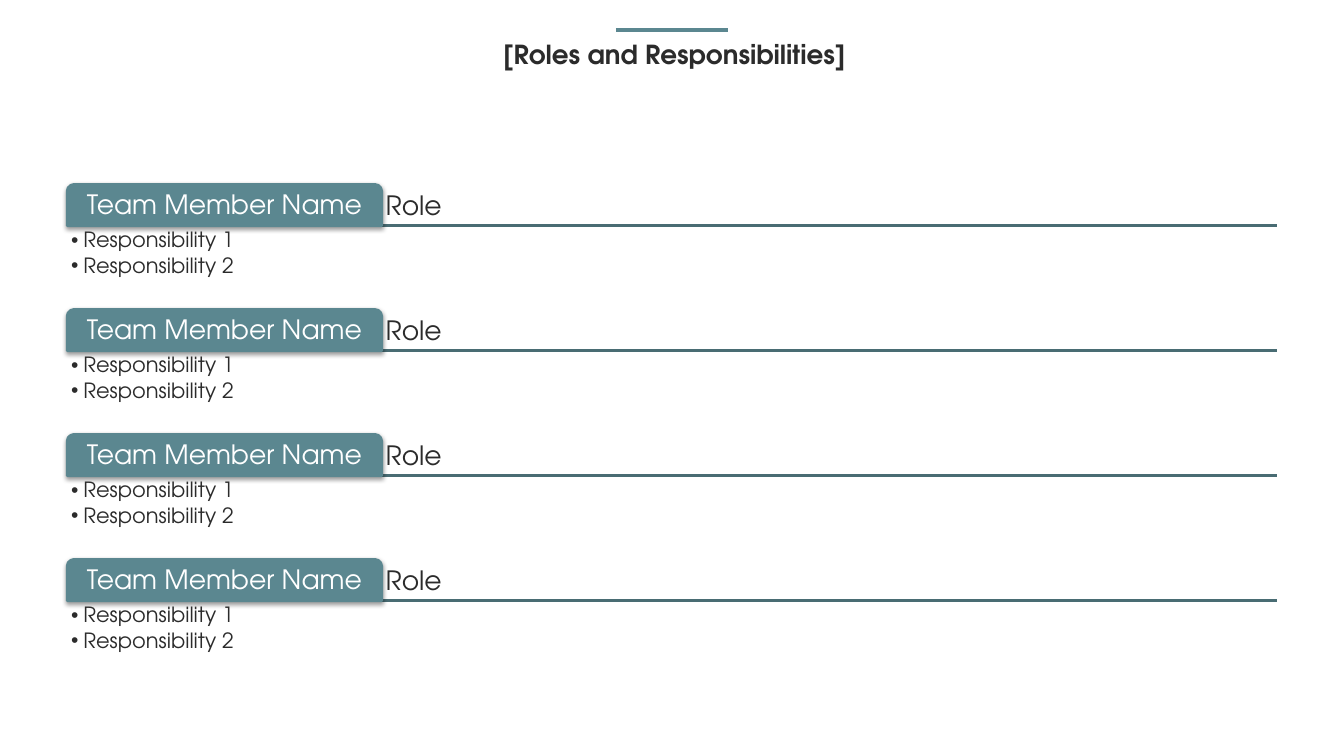
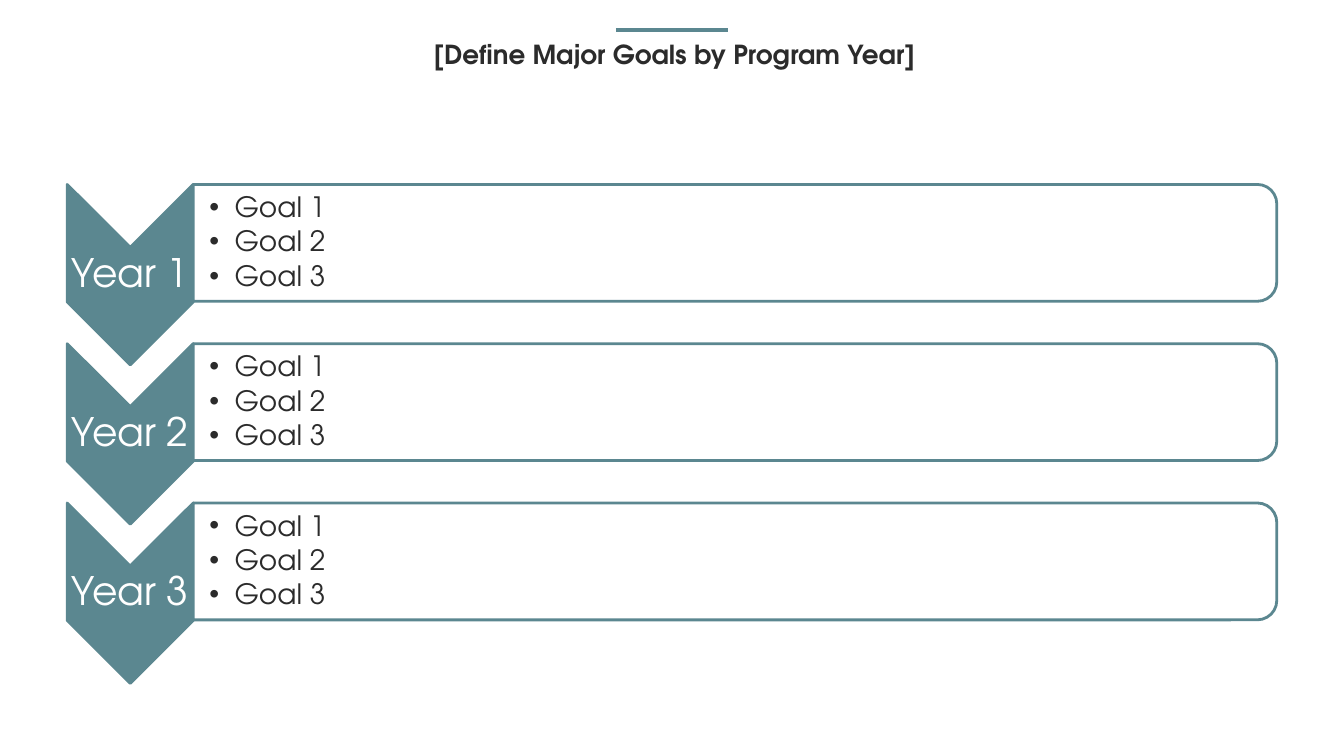
from dataclasses import dataclass

from lxml import etree
from pptx import Presentation
from pptx.dml.color import RGBColor
from pptx.enum.shapes import MSO_CONNECTOR, MSO_SHAPE
from pptx.enum.text import MSO_ANCHOR, PP_ALIGN
from pptx.oxml.ns import qn
from pptx.util import Emu, Inches, Pt

LINE = MSO_CONNECTOR.STRAIGHT
TAB = MSO_SHAPE.ROUND_2_SAME_RECTANGLE
CHEVRON = MSO_SHAPE.CHEVRON
TOP, MIDDLE, BOTTOM = MSO_ANCHOR.TOP, MSO_ANCHOR.MIDDLE, MSO_ANCHOR.BOTTOM
LEFT, CENTER = PP_ALIGN.LEFT, PP_ALIGN.CENTER


@dataclass(frozen=True)
class Theme:
    font: str = "TeX Gyre Adventor"
    teal: str = "5B8790"
    deep: str = "496C73"
    ink: str = "2B2B2B"
    white: str = "FFFFFF"
    title: float = 18.7
    name: float = 19
    duty: float = 15
    year: float = 28
    goal: float = 20
    rule: float = 2
    accent: float = 3


THEME = Theme()

# Slide and content grid, in inches
WIDE, HIGH = 13.33, 7.5
EDGE = WIDE * 0.05
SPAN = WIDE * 0.9
START = 1.83

# Team rows
TEAM_STEP = 1.24
TAB_WIDE, TAB_HIGH = SPAN * 0.26, 0.41
DUTY_HIGH = TEAM_STEP - TAB_HIGH

# Year rows
YEAR_STEP = 1.58
MARK_WIDE, MARK_HIGH = 1.25, 1.79
BAR_HIGH = 1.16

TEAM = [("Team Member Name", "Role", ["Responsibility 1", "Responsibility 2"])] * 4
YEARS = [(f"Year {n}", ["Goal 1", "Goal 2", "Goal 3"]) for n in (1, 2, 3)]


def color(code):
    return RGBColor.from_string(code)


def write(shape, lines, size, tint=THEME.ink, align=LEFT, anchor=MIDDLE,
          pad=(0.04, 0.04), bold=False, hang=0, lead=0.9):
    """Fill a shape with text; pad is (left, other sides), hang makes bullets."""
    frame = shape.text_frame
    frame.word_wrap = True
    frame.vertical_anchor = anchor
    frame.margin_left = Inches(pad[0])
    frame.margin_top = frame.margin_right = frame.margin_bottom = Inches(pad[1])
    frame.text = "\n".join(lines)
    for para in frame.paragraphs:
        if hang:
            bullet(para, hang)
            para.space_after = Pt(size * 0.15)
        para.alignment = align
        para.line_spacing = lead
        font = para.font
        font.name, font.size, font.bold = THEME.font, Pt(size), bold
        font.color.rgb = color(tint)


def bullet(para, hang):
    props = para._p.get_or_add_pPr()
    props.set("marL", str(Inches(hang)))
    props.set("indent", str(-Inches(hang)))
    etree.SubElement(props, qn("a:buFont")).set("typeface", "Arial")
    etree.SubElement(props, qn("a:buChar")).set("char", "•")


def text(slide, box, lines, size, **style):
    area = slide.shapes.add_textbox(*map(Inches, box))
    write(area, lines, size, **style)


def rule(slide, left, right, top, tint, weight):
    line = slide.shapes.add_connector(LINE, *map(Inches, (left, top, right, top)))
    line.line.color.rgb = color(tint)
    line.line.width = Pt(weight)
    etree.SubElement(line._element.spPr, qn("a:effectLst"))


def block(slide, kind, box, fill, turned=False):
    """Draw a teal-edged shape; a turned one is rotated to cover box."""
    left, top, wide, high = box
    if turned:
        left, top = left + (wide - high) / 2, top + (high - wide) / 2
        wide, high = high, wide
    shape = slide.shapes.add_shape(kind, *map(Inches, (left, top, wide, high)))
    shape.rotation = 90 if turned else 0
    shape.shadow.inherit = False
    shape.fill.solid()
    shape.fill.fore_color.rgb = color(fill)
    shape.line.color.rgb = color(THEME.teal)
    shape.line.width = Pt(THEME.rule)
    return shape


def shade(shape):
    """Add a soft shadow straight below."""
    effects = shape._element.spPr.find(qn("a:effectLst"))
    drop = etree.SubElement(effects, qn("a:outerShdw"), blurRad=str(Pt(3.1)),
                            dist=str(Pt(1.6)), dir="5400000", rotWithShape="0")
    tint = etree.SubElement(drop, qn("a:srgbClr"), val="000000")
    etree.SubElement(tint, qn("a:alpha"), val="38000")


def page(deck, title):
    slide = deck.slides.add_slide(deck.slide_layouts[6])
    half = WIDE / 24
    rule(slide, WIDE / 2 - half, WIDE / 2 + half, HIGH * 0.04,
         THEME.teal, THEME.accent)
    text(slide, (EDGE, 0.31, SPAN, 0.46), [title], THEME.title,
         align=CENTER, pad=(0.1, 0.05), bold=True, lead=1.0)
    return slide


def member(slide, top, name, role, duties):
    base = top + TAB_HIGH
    rule(slide, EDGE, EDGE + SPAN, base, THEME.deep, THEME.rule)
    text(slide, (EDGE + TAB_WIDE, top, SPAN - TAB_WIDE, TAB_HIGH), [role],
         THEME.name, anchor=BOTTOM)
    tab = block(slide, TAB, (EDGE, top, TAB_WIDE, TAB_HIGH), THEME.teal)
    shade(tab)
    write(tab, [name], THEME.name, tint=THEME.white, align=CENTER)
    text(slide, (EDGE, base, SPAN, DUTY_HIGH), duties, THEME.duty,
         anchor=TOP, hang=0.12)


def year(slide, top, name, goals):
    mark = (EDGE, top, MARK_WIDE, MARK_HIGH)
    bar = (EDGE + MARK_WIDE, top, SPAN - MARK_WIDE, BAR_HIGH)
    block(slide, CHEVRON, mark, THEME.teal, turned=True)
    text(slide, mark, [name], THEME.year, tint=THEME.white, align=CENTER,
         pad=(0.02, 0.02))
    block(slide, TAB, bar, THEME.white, turned=True)
    text(slide, bar, goals, THEME.goal, pad=(0.16, 0.01), hang=0.25)


def main():
    deck = Presentation()
    deck.slide_width, deck.slide_height = Emu(Inches(WIDE)), Emu(Inches(HIGH))

    slide = page(deck, "[Roles and Responsibilities]")
    for row, item in enumerate(TEAM):
        member(slide, START + row * TEAM_STEP, *item)

    slide = page(deck, "[Define Major Goals by Program Year]")
    for row, item in enumerate(YEARS):
        year(slide, START + row * YEAR_STEP, *item)

    deck.save("out.pptx")


if __name__ == "__main__":
    main()
